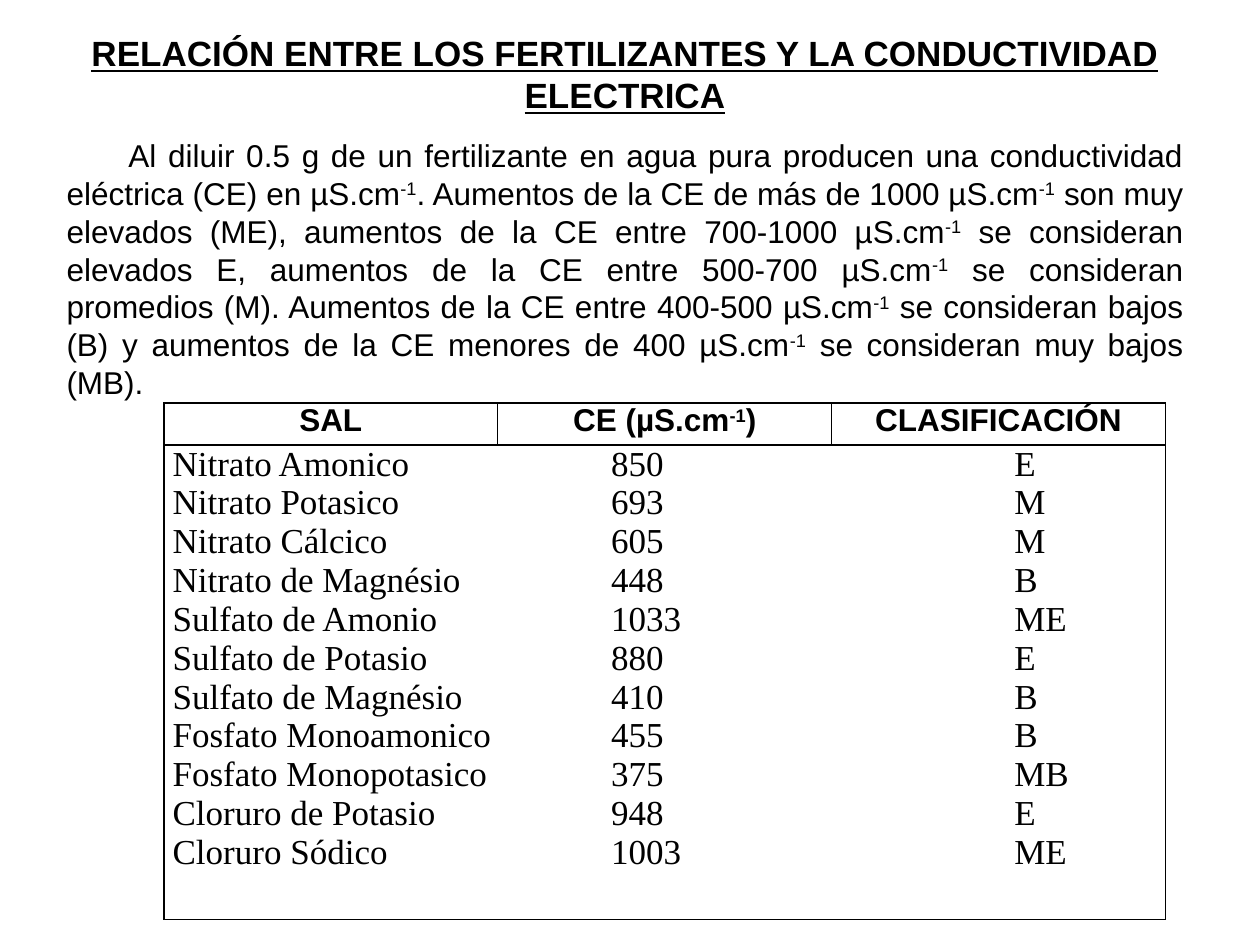
from lxml import etree
from pptx import Presentation
from pptx.dml.color import RGBColor
from pptx.enum.text import MSO_ANCHOR, MSO_AUTO_SIZE, PP_ALIGN
from pptx.oxml.ns import qn
from pptx.util import Inches, Pt

CENTER, JUSTIFY, LEFT = PP_ALIGN.CENTER, PP_ALIGN.JUSTIFY, PP_ALIGN.LEFT
MIDDLE, TOP = MSO_ANCHOR.MIDDLE, MSO_ANCHOR.TOP
NO_FIT = MSO_AUTO_SIZE.NONE
BLACK = RGBColor(0, 0, 0)
SANS, SERIF = "Arial", "Times New Roman"

TITLE = "RELACIÓN ENTRE LOS FERTILIZANTES Y LA CONDUCTIVIDAD ELECTRICA"
# Text between carets is superscript.
INTRO = (
    "Al diluir 0.5 g de un fertilizante en agua pura producen una conductividad "
    "eléctrica (CE) en µS.cm^-1^. Aumentos de la CE de más de 1000 µS.cm^-1^ son muy "
    "elevados (ME), aumentos de la CE entre 700-1000 µS.cm^-1^ se consideran "
    "elevados E, aumentos de la CE entre 500-700 µS.cm^-1^ se consideran "
    "promedios (M). Aumentos de la CE entre 400-500 µS.cm^-1^ se consideran bajos "
    "(B) y aumentos de la CE menores de 400 µS.cm^-1^ se consideran muy bajos (MB)."
)
HEADERS = ["SAL", "CE (µS.cm^-1^)", "CLASIFICACIÓN"]
SALTS = [
    ("Nitrato Amonico", 850, "E"),
    ("Nitrato Potasico", 693, "M"),
    ("Nitrato Cálcico", 605, "M"),
    ("Nitrato de Magnésio", 448, "B"),
    ("Sulfato de Amonio", 1033, "ME"),
    ("Sulfato de Potasio", 880, "E"),
    ("Sulfato de Magnésio", 410, "B"),
    ("Fosfato Monoamonico", 455, "B"),
    ("Fosfato Monopotasico", 375, "MB"),
    ("Cloruro de Potasio", 948, "E"),
    ("Cloruro Sódico", 1003, "ME"),
]
SALT_TABS = [Inches(3.48), Inches(6.68)]


def write(p, text, size, font=SANS, bold=False, underline=False, align=CENTER):
    """Add text to a paragraph, with the parts between carets as superscript."""
    p.alignment = align
    for i, part in enumerate(text.split("^")):
        r = p.add_run()
        r.text = part
        f = r.font
        f.name, f.size, f.bold, f.underline = font, Pt(size), bold, underline
        f.color.rgb = BLACK
        if i % 2:
            r._r.get_or_add_rPr().set("baseline", "30000")


def set_tabs(p, stops):
    tab_list = etree.SubElement(p._p.get_or_add_pPr(), qn("a:tabLst"))
    for stop in stops:
        etree.SubElement(tab_list, qn("a:tab"), pos=str(stop), algn="l")


def style_cell(cell):
    """Give a cell thin black borders, no fill and narrow margins."""
    tc_pr = cell._tc.get_or_add_tcPr()
    for side in ("lnL", "lnR", "lnT", "lnB"):
        ln = etree.SubElement(tc_pr, qn(f"a:{side}"), w=str(Pt(1)))
        fill = etree.SubElement(ln, qn("a:solidFill"))
        etree.SubElement(fill, qn("a:srgbClr"), val=str(BLACK))
    cell.fill.background()
    cell.margin_left = cell.margin_right = Inches(0.07)
    cell.margin_top = cell.margin_bottom = 0
    cell.vertical_anchor = TOP


def add_title(s):
    title = s.shapes.title
    title.left, title.top = Inches(0.59), Inches(0.2)
    title.width, title.height = Inches(8.74), Inches(0.77)
    tf = title.text_frame
    tf.auto_size, tf.vertical_anchor = NO_FIT, MIDDLE
    write(tf.paragraphs[0], TITLE, 20, bold=True, underline=True)


def add_intro(s):
    box = s.shapes.add_textbox(Inches(0.43), Inches(1.02), Inches(9.06), Inches(2.22))
    tf = box.text_frame
    tf.word_wrap, tf.vertical_anchor = True, MIDDLE
    p = tf.paragraphs[0]
    write(p, INTRO, 18, align=JUSTIFY)
    p._p.get_or_add_pPr().set("indent", str(Inches(0.49)))


def add_salt_table(s):
    """Header row of three cells over one merged cell with tabbed lines."""
    table = s.shapes.add_table(
        2, 3, Inches(1.3), Inches(3.2), Inches(7.95), Inches(4.1)
    ).table
    table.first_row = table.horz_banding = False
    table.rows[0].height, table.rows[1].height = Inches(0.33), Inches(3.77)
    for cell in table.iter_cells():
        style_cell(cell)
    for col, header in enumerate(HEADERS):
        p = table.cell(0, col).text_frame.paragraphs[0]
        write(p, header, 18, bold=True)

    body = table.cell(1, 0)
    body.merge(table.cell(1, 2))
    tf = body.text_frame
    for i, (salt, ce, level) in enumerate(SALTS):
        p = tf.add_paragraph() if i else tf.paragraphs[0]
        write(p, f"{salt}\t{ce}\t{level}", 20, font=SERIF, align=LEFT)
        set_tabs(p, SALT_TABS)


def main():
    prs = Presentation()
    prs.slide_width, prs.slide_height = Inches(10), Inches(7.5)
    s = prs.slides.add_slide(prs.slide_layouts[5])
    add_title(s)
    add_intro(s)
    add_salt_table(s)
    prs.save("out.pptx")


if __name__ == "__main__":
    main()
